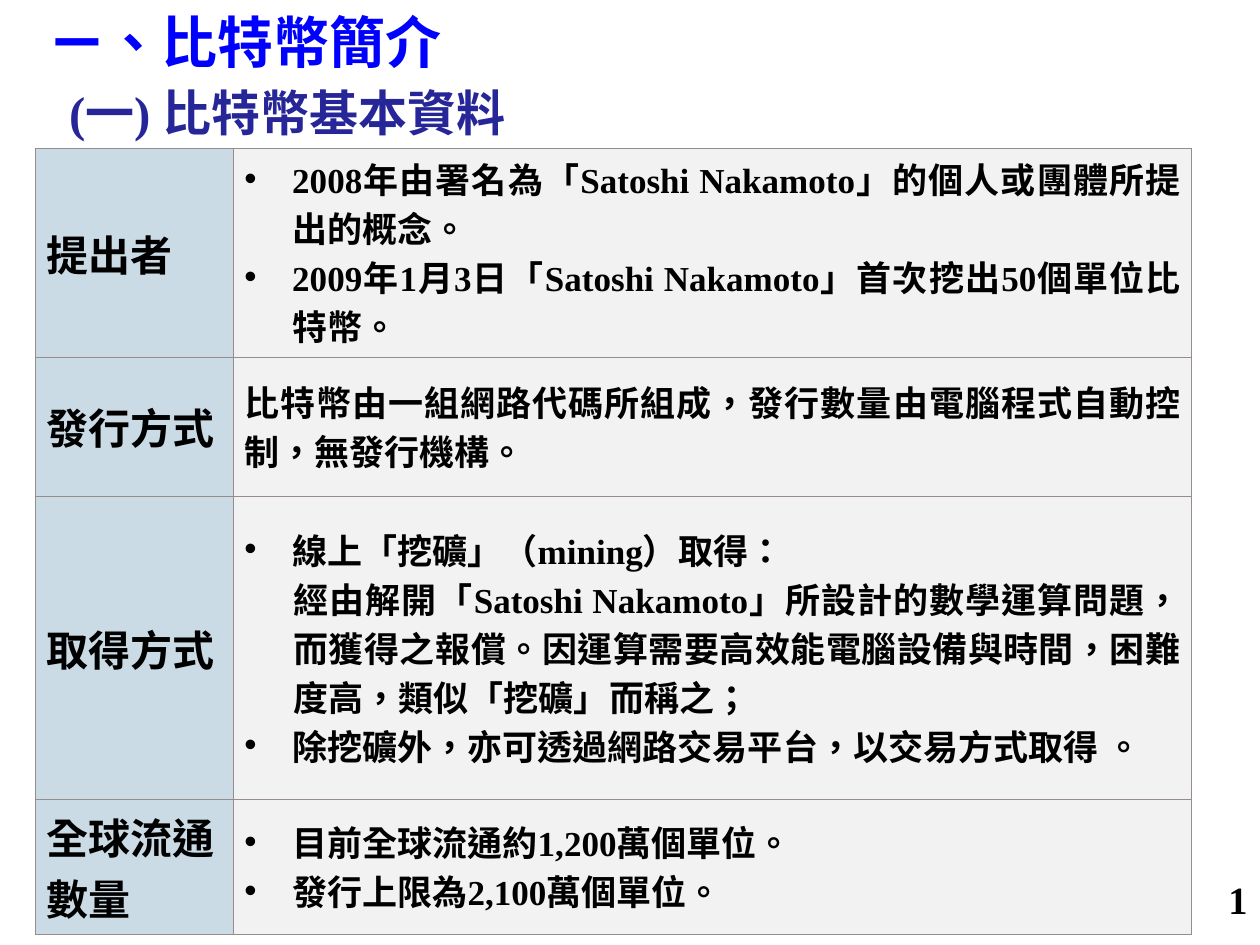
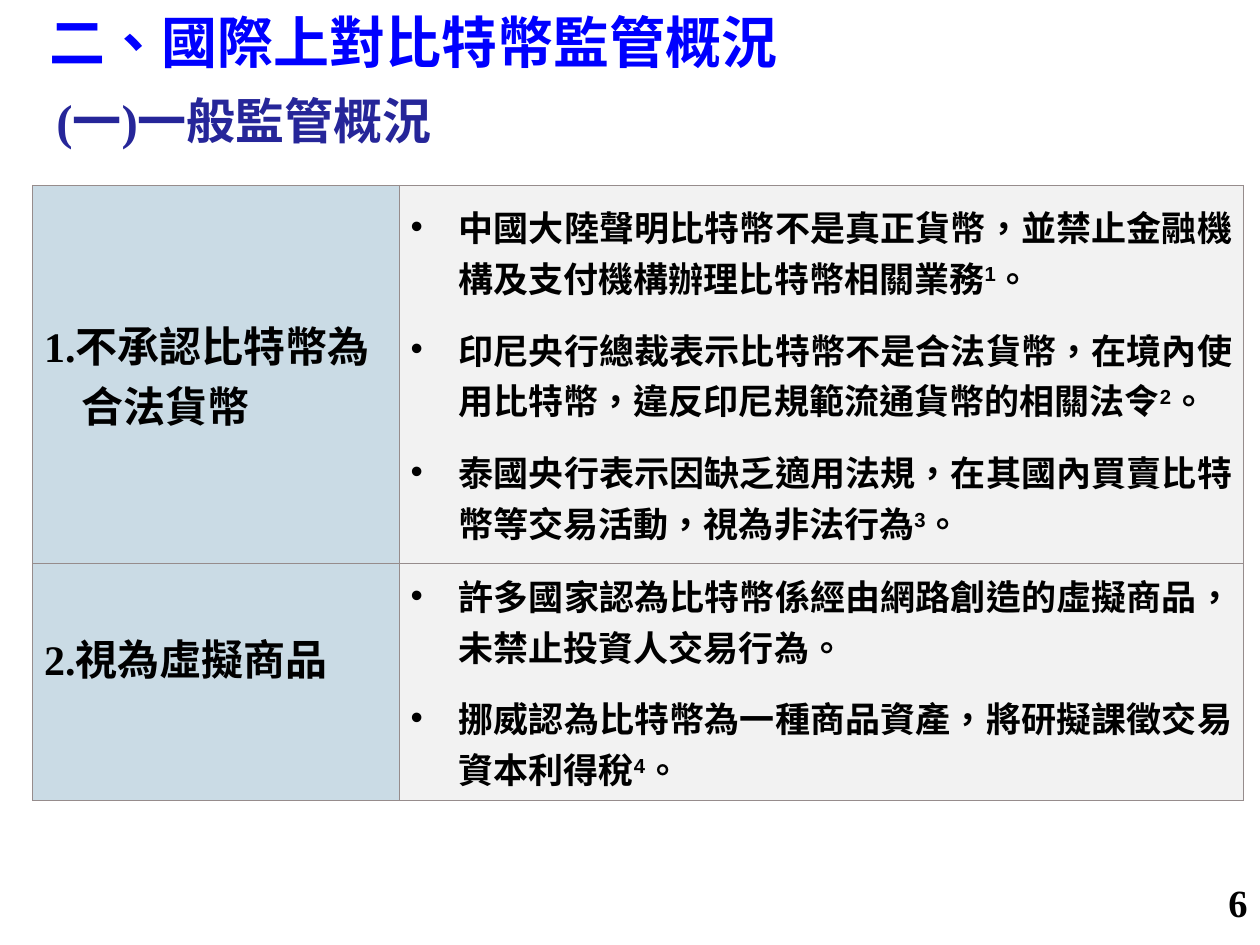
from lxml import etree
from pptx import Presentation
from pptx.dml.color import RGBColor
from pptx.enum.text import MSO_ANCHOR, MSO_AUTO_SIZE, PP_ALIGN
from pptx.oxml.ns import qn
from pptx.util import Inches, Pt

LEFT, RIGHT, JUST = PP_ALIGN.LEFT, PP_ALIGN.RIGHT, PP_ALIGN.JUSTIFY
MIDDLE, TOP = MSO_ANCHOR.MIDDLE, MSO_ANCHOR.TOP
NO_FIT = MSO_AUTO_SIZE.NONE
TITLE_ONLY = 5

SERIF, SANS, HAN = "Times New Roman", "Arial", "Noto Sans CJK TC"
BLUE, NAVY, BLACK = "0000FF", "262699", "000000"
HEAD, BODY, EDGE = "CADBE5", "F2F2F2", "968C8C"

# Paragraph kinds: left margin, first-line indent, bullet
PLAIN = (0, 0, "")
POINT = (0.38, -0.38, "•")
INSET = (0.39, 0, "")
HANG = (0.3, -0.3, "")

# Each row: height, label, paragraphs; ^ marks enclose a raised note number
FACTS = [
    (1.61, "提出者", [
        (POINT, "2008年由署名為「Satoshi Nakamoto」的個人或團體所提出的概念。"),
        (POINT, "2009年1月3日「Satoshi Nakamoto」首次挖出50個單位比特幣。")]),
    (1.1, "發行方式", [
        (PLAIN, "比特幣由一組網路代碼所組成，發行數量由電腦程式自動控制，無發行機構。")]),
    (2.41, "取得方式", [
        (POINT, "線上「挖礦」（mining）取得："),
        (INSET, "經由解開「Satoshi Nakamoto」所設計的數學運算問題，而獲得之報償。"
                "因運算需要高效能電腦設備與時間，困難度高，類似「挖礦」而稱之；"),
        (POINT, "除挖礦外，亦可透過網路交易平台，以交易方式取得 。")]),
    (0.92, "全球流通數量", [
        (POINT, "目前全球流通約1,200萬個單位。"),
        (POINT, "發行上限為2,100萬個單位。")]),
]
RULES = [
    (3, "1.不承認比特幣為合法貨幣", [
        (POINT, "中國大陸聲明比特幣不是真正貨幣，並禁止金融機構及支付機構辦理比特幣相關業務^1^。"),
        (POINT, "印尼央行總裁表示比特幣不是合法貨幣，在境內使用比特幣，"
                "違反印尼規範流通貨幣的相關法令^2^。"),
        (POINT, "泰國央行表示因缺乏適用法規，在其國內買賣比特幣等交易活動，視為非法行為^3^。")]),
    (1.67, "2.視為虛擬商品", [
        (POINT, "許多國家認為比特幣係經由網路創造的虛擬商品，未禁止投資人交易行為。"),
        (POINT, "挪威認為比特幣為一種商品資產，將研擬課徵交易資本利得稅^4^。")]),
]


def rgb(code):
    return RGBColor.from_string(code)


def style(para, size, color=BLACK, face=SERIF):
    for run in para.runs:
        font = run.font
        font.size, font.bold, font.name = Pt(size), True, face
        font.color.rgb = rgb(color)
        props = run._r.get_or_add_rPr()
        props.set("lang", "zh-TW")
        han = etree.SubElement(props, qn("a:ea"))
        han.set("typeface", HAN)


def shape_para(para, kind):
    """Set margin, indent and bullet; keep punctuation inside the margin."""
    margin, first, mark = kind
    props = para._p.get_or_add_pPr()
    props.set("marL", str(Inches(margin)))
    props.set("indent", str(Inches(first)))
    props.set("hangingPunct", "0")
    if mark:
        etree.SubElement(props, qn("a:buFont")).set("typeface", SANS)
        etree.SubElement(props, qn("a:buChar")).set("char", mark)


def raise_notes(para, text):
    for n, part in enumerate(text.split("^")):
        run = para.add_run()
        run.text = part
        if n % 2:
            run._r.get_or_add_rPr().set("baseline", "30000")


def write(shape, text, size, color, align, anchor):
    frame = shape.text_frame
    frame.word_wrap, frame.auto_size = True, NO_FIT
    frame.vertical_anchor = anchor
    frame.text = text
    para = frame.paragraphs[0]
    para.alignment = align
    style(para, size, color)
    return para


def place(shape, left, top, width, height):
    shape.left, shape.top = Inches(left), Inches(top)
    shape.width, shape.height = Inches(width), Inches(height)


def add_text(slide, box, text, size, color, align):
    shape = slide.shapes.add_textbox(*map(Inches, box))
    return write(shape, text, size, color, align, TOP)


def add_page(deck, title, sub, sub_at, number, number_top):
    slide = deck.slides.add_slide(deck.slide_layouts[TITLE_ONLY])
    head = slide.shapes.title
    place(head, 0.29, 0, 9.65, 0.66)
    head.text_frame.margin_top = head.text_frame.margin_bottom = 0
    write(head, title, 32, BLUE, LEFT, MIDDLE)
    para = add_text(slide, (*sub_at, 9.53, 0.66), sub, 28, NAVY, JUST)
    para.line_spacing = Pt(40)
    add_text(slide, (7.92, number_top, 2.08, 0.5), number, 22, BLACK, RIGHT)
    return slide


def paint(cell, color):
    """Fill a cell and draw its four borders."""
    props = cell._tc.get_or_add_tcPr()
    for side in "LRTB":
        line = etree.SubElement(props, qn(f"a:ln{side}"), w=str(Pt(0.5)))
        fill = etree.SubElement(line, qn("a:solidFill"))
        etree.SubElement(fill, qn("a:srgbClr"), val=EDGE)
    cell.fill.solid()
    cell.fill.fore_color.rgb = rgb(color)
    cell.vertical_anchor = MIDDLE
    cell.margin_left = cell.margin_right = Inches(0.09)
    cell.margin_top = cell.margin_bottom = Inches(0.05)


def fill_body(cell, items, face, line, gap):
    frame = cell.text_frame
    for n, (kind, text) in enumerate(items):
        para = frame.add_paragraph() if n else frame.paragraphs[0]
        raise_notes(para, text)
        para.alignment = JUST
        if line:
            para.line_spacing = Pt(line)
        para.space_before = Pt(gap)
        shape_para(para, kind)
        style(para, 20, face=face)


def add_grid(slide, left, top, widths, rows, kind=PLAIN, face=SERIF, line=None, gap=0):
    high = sum(row[0] for row in rows)
    box = map(Inches, (left, top, sum(widths), high))
    table = slide.shapes.add_table(len(rows), 2, *box).table
    table.first_row = table.horz_banding = False
    for col, width in zip(table.columns, widths):
        col.width = Inches(width)
    for n, (height, label, items) in enumerate(rows):
        table.rows[n].height = Inches(height)
        name, body = table.cell(n, 0), table.cell(n, 1)
        paint(name, HEAD)
        paint(body, BODY)
        name.text_frame.text = label
        para = name.text_frame.paragraphs[0]
        shape_para(para, kind)
        style(para, 24)
        fill_body(body, items, face, line, gap)
    return table


def main():
    deck = Presentation()
    deck.slide_width, deck.slide_height = Inches(10), Inches(7.5)

    slide = add_page(deck, "ㄧ、比特幣簡介", "(一) 比特幣基本資料", (0.45, 0.52), "1", 6.9)
    add_grid(slide, 0.28, 1.18, (1.57, 7.61), FACTS, line=28)

    slide = add_page(deck, "二、國際上對比特幣監管概況", "(一)一般監管概況", (0.35, 0.58), "6", 6.93)
    table = add_grid(slide, 0.26, 1.47, (2.91, 6.7), RULES, kind=HANG, face=SANS, gap=12)
    table.cell(1, 0).margin_bottom = Inches(0.43)

    deck.save("out.pptx")


if __name__ == "__main__":
    main()
